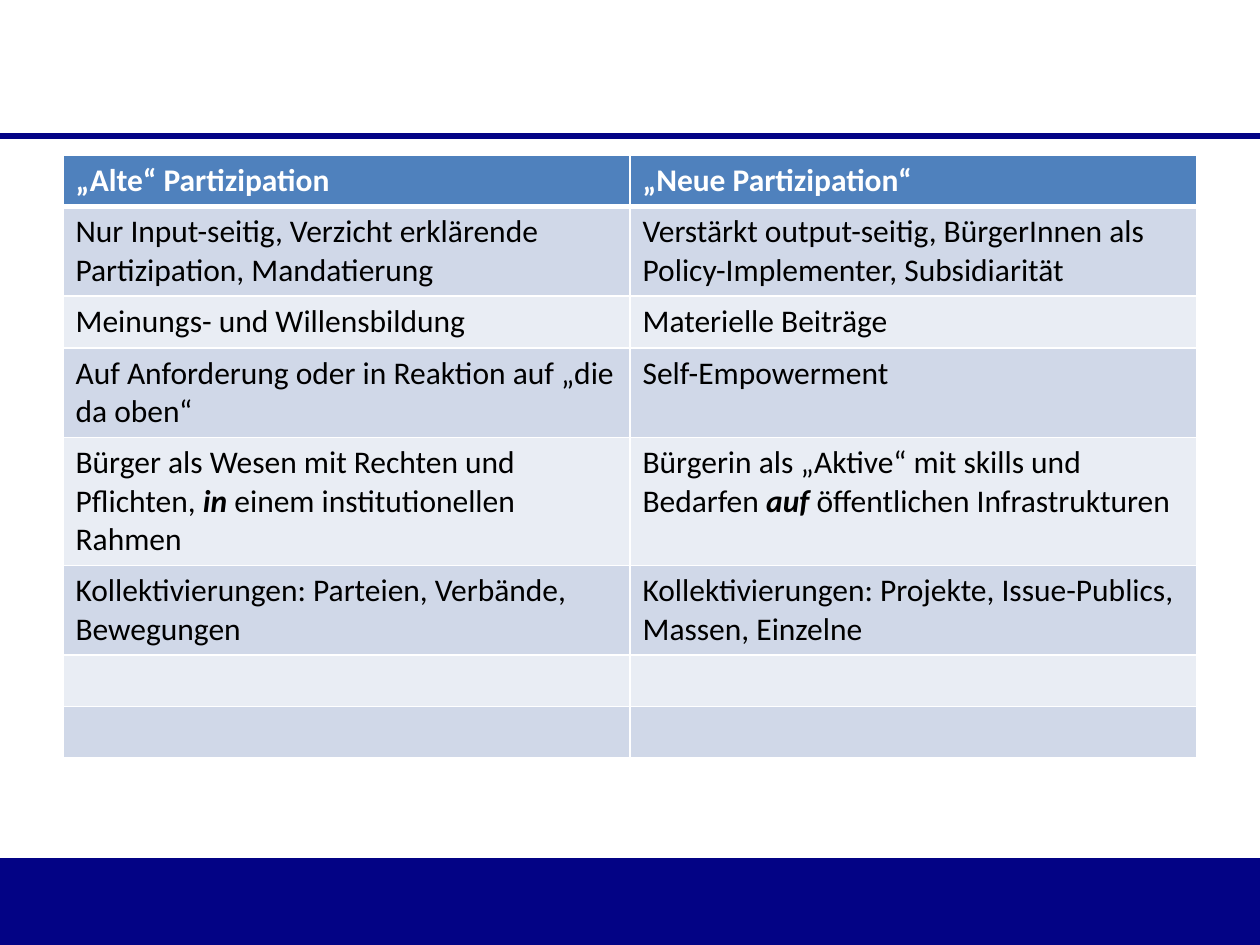
from dataclasses import dataclass

from lxml import etree
from pptx import Presentation
from pptx.dml.color import RGBColor
from pptx.enum.shapes import MSO_CONNECTOR as Connector, MSO_SHAPE as Shape
from pptx.oxml.ns import qn
from pptx.util import Inches, Pt

COLORS = {
    "navy": "030385",
    "header": "4F81BD",
    "band_dark": "D0D8E8",
    "band_light": "E9EDF4",
    "white": "FFFFFF",
    "black": "000000",
}
FONT = "Calibri"


@dataclass
class Run:
    text: str
    strong: bool = False


@dataclass
class Row:
    left: list[Run]
    right: list[Run]
    height: float = 0.41


ROWS = [
    Row([Run("„Alte“ Partizipation")], [Run("„Neue Partizipation“")]),
    Row([Run("Nur Input-seitig, Verzicht erklärende Partizipation, Mandatierung")],
        [Run("Verstärkt output-seitig, BürgerInnen als Policy-Implementer, Subsidiarität")], 0.7),
    Row([Run("Meinungs- und Willensbildung")], [Run("Materielle Beiträge")]),
    Row([Run("Auf Anforderung oder in Reaktion auf „die da oben“")],
        [Run("Self-Empowerment")], 0.7),
    Row([Run("Bürger als Wesen mit Rechten und Pflichten, "), Run("in", True),
         Run(" einem institutionellen Rahmen")],
        [Run("Bürgerin als „Aktive“ mit skills und Bedarfen "), Run("auf", True),
         Run(" öffentlichen Infrastrukturen")], 1.0),
    Row([Run("Kollektivierungen: Parteien, Verbände, Bewegungen")],
        [Run("Kollektivierungen: Projekte, Issue-Publics, Massen, Einzelne")], 0.7),
    Row([], []),
    Row([], []),
]


def color(name: str) -> RGBColor:
    return RGBColor.from_string(COLORS[name])


def add_frame(page) -> None:
    """Footer bar and the line under the title area."""
    bar = page.shapes.add_shape(Shape.RECTANGLE, 0, Inches(6.81), Inches(10), Inches(0.69))
    bar.shadow.inherit = False
    bar.fill.solid()
    bar.fill.fore_color.rgb = color("navy")
    bar.line.fill.background()

    rule = page.shapes.add_connector(
        Connector.STRAIGHT, 0, Inches(1.08), Inches(10), Inches(1.08))
    rule.line.color.rgb = color("navy")
    rule.line.width = Pt(3)
    etree.SubElement(rule._element.spPr, qn("a:effectLst"))


def set_borders(cell, row_index: int) -> None:
    """White borders, with a thick one between header and body."""
    widths = {
        "L": 1,
        "R": 1,
        "T": 3 if row_index == 1 else 1,
        "B": 3 if row_index == 0 else 1,
    }
    properties = cell._tc.get_or_add_tcPr()
    for side, width in widths.items():
        border = etree.SubElement(properties, qn(f"a:ln{side}"), w=str(Pt(width)))
        fill = etree.SubElement(border, qn("a:solidFill"))
        etree.SubElement(fill, qn("a:srgbClr"), val=COLORS["white"])


def fill_cell(cell, runs: list[Run], row_index: int) -> None:
    is_header = row_index == 0
    band = "band_dark" if row_index % 2 else "band_light"
    set_borders(cell, row_index)
    cell.fill.solid()
    cell.fill.fore_color.rgb = color("header" if is_header else band)

    para = cell.text_frame.paragraphs[0]
    para.font.size = Pt(18)
    for run in runs:
        span = para.add_run()
        span.text = run.text
        span.font.name = FONT
        span.font.size = Pt(18)
        span.font.bold = is_header or run.strong
        span.font.italic = run.strong
        span.font.color.rgb = color("white" if is_header else "black")


def add_comparison(page, rows: list[Row]) -> None:
    height = sum(row.height for row in rows)
    table = page.shapes.add_table(
        len(rows), 2, Inches(0.5), Inches(1.23), Inches(9), Inches(height)).table
    for index, row in enumerate(rows):
        table.rows[index].height = Inches(row.height)
        for column, runs in enumerate((row.left, row.right)):
            fill_cell(table.cell(index, column), runs, index)


def main() -> None:
    deck = Presentation()
    deck.slide_width, deck.slide_height = Inches(10), Inches(7.5)
    page = deck.slides.add_slide(deck.slide_layouts[6])
    add_frame(page)
    add_comparison(page, ROWS)
    deck.save("out.pptx")


if __name__ == "__main__":
    main()
